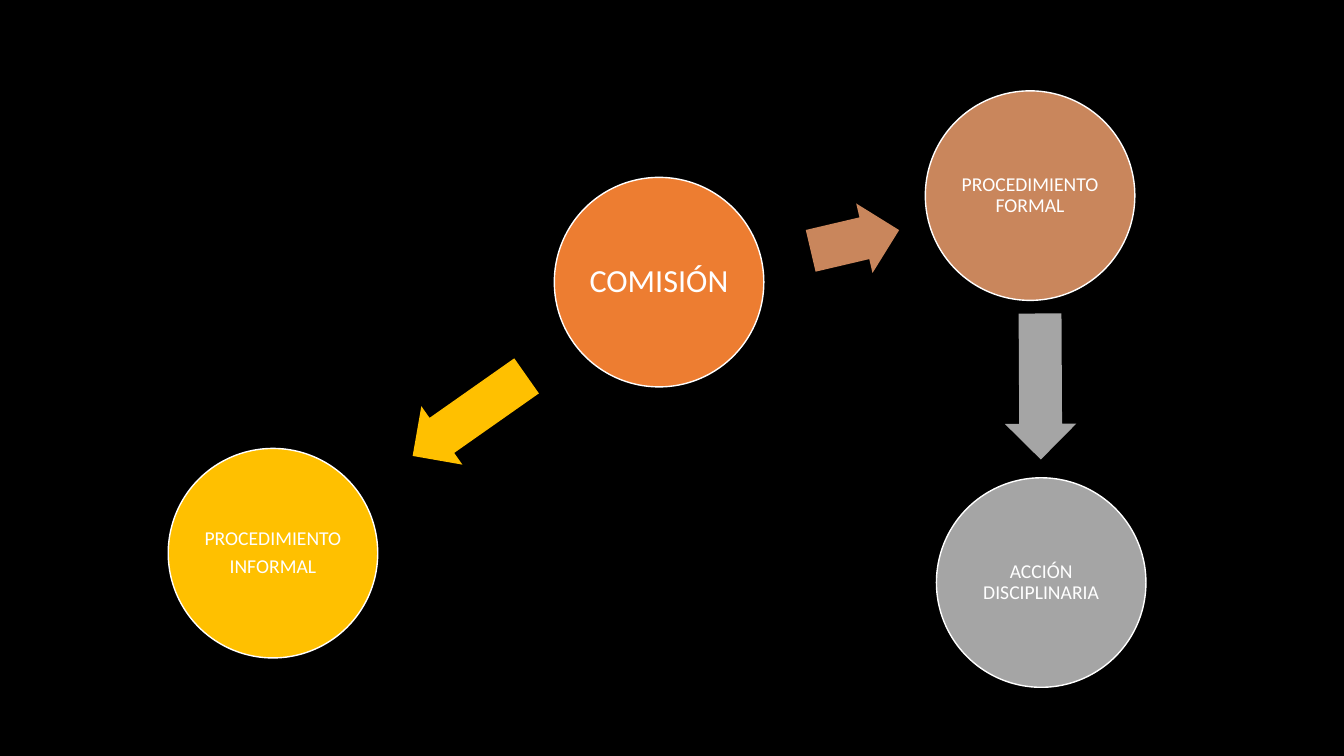
"""Build a slide showing the commission and its formal and informal procedures."""
import pptx
import pptx.dml.color
import pptx.enum.shapes
import pptx.enum.text
import pptx.util

Cm = pptx.util.Cm
Pt = pptx.util.Pt
ShapeType = pptx.enum.shapes.MSO_SHAPE


def rgb(value):
    return pptx.dml.color.RGBColor.from_string(value)


def add_filled_shape(kind, left, top, width, height, color):
    shape = slide.shapes.add_shape(kind, Cm(left), Cm(top), Cm(width), Cm(height))
    shape.shadow.inherit = False
    shape.fill.solid()
    shape.fill.fore_color.rgb = rgb(color)
    return shape


ORANGE, COPPER, GRAY, YELLOW = "ED7D31", "C9865C", "A5A5A5", "FFC000"
DIAMETER = 5.28
ARROW_HEIGHT = 1.8

presentation = pptx.Presentation()
presentation.slide_width = Cm(33.87)
presentation.slide_height = Cm(19.05)
slide = presentation.slides.add_slide(presentation.slide_layouts[6])
slide.background.fill.solid()
slide.background.fill.fore_color.rgb = rgb("000000")

arrows = [
    (24.38, 8.84, 3.68, 89.7, GRAY),
    (20.4, 5.16, 2.29, 346.8, COPPER),
    (10.08, 9.58, 3.51, 144.9, YELLOW),
]
for left, top, length, rotation, color in arrows:
    arrow = add_filled_shape(ShapeType.RIGHT_ARROW, left, top, length, ARROW_HEIGHT, color)
    arrow.line.fill.background()
    arrow.adjustments[0] = 0.6
    arrow.adjustments[1] = 0.5
    arrow.rotation = rotation

circles = [
    ("COMISIÓN", 13.97, 4.47, 23, ORANGE),
    ("ACCIÓN DISCIPLINARIA", 23.6, 12.04, 14, GRAY),
    ("PROCEDIMIENTO FORMAL", 23.32, 2.29, 14, COPPER),
    ("PROCEDIMIENTO\nINFORMAL", 4.24, 11.3, 14, YELLOW),
]
for text, left, top, size, color in circles:
    circle = add_filled_shape(ShapeType.OVAL, left, top, DIAMETER, DIAMETER, color)
    circle.line.color.rgb = rgb("FFFFFF")
    circle.line.width = Pt(1)
    frame = circle.text_frame
    frame.word_wrap = True
    frame.vertical_anchor = pptx.enum.text.MSO_ANCHOR.MIDDLE
    frame.margin_left = frame.margin_right = Cm(0.05)
    frame.margin_top = frame.margin_bottom = Cm(0.05)
    frame.text = text
    for paragraph in frame.paragraphs:
        paragraph.alignment = pptx.enum.text.PP_ALIGN.CENTER
        paragraph.line_spacing = 0.9
        paragraph.space_after = Pt(round(size * 0.35))
        for run in paragraph.runs:
            run.font.name = "Calibri"
            run.font.size = Pt(size)
            run.font.color.rgb = rgb("FFFFFF")

presentation.save("out.pptx")
